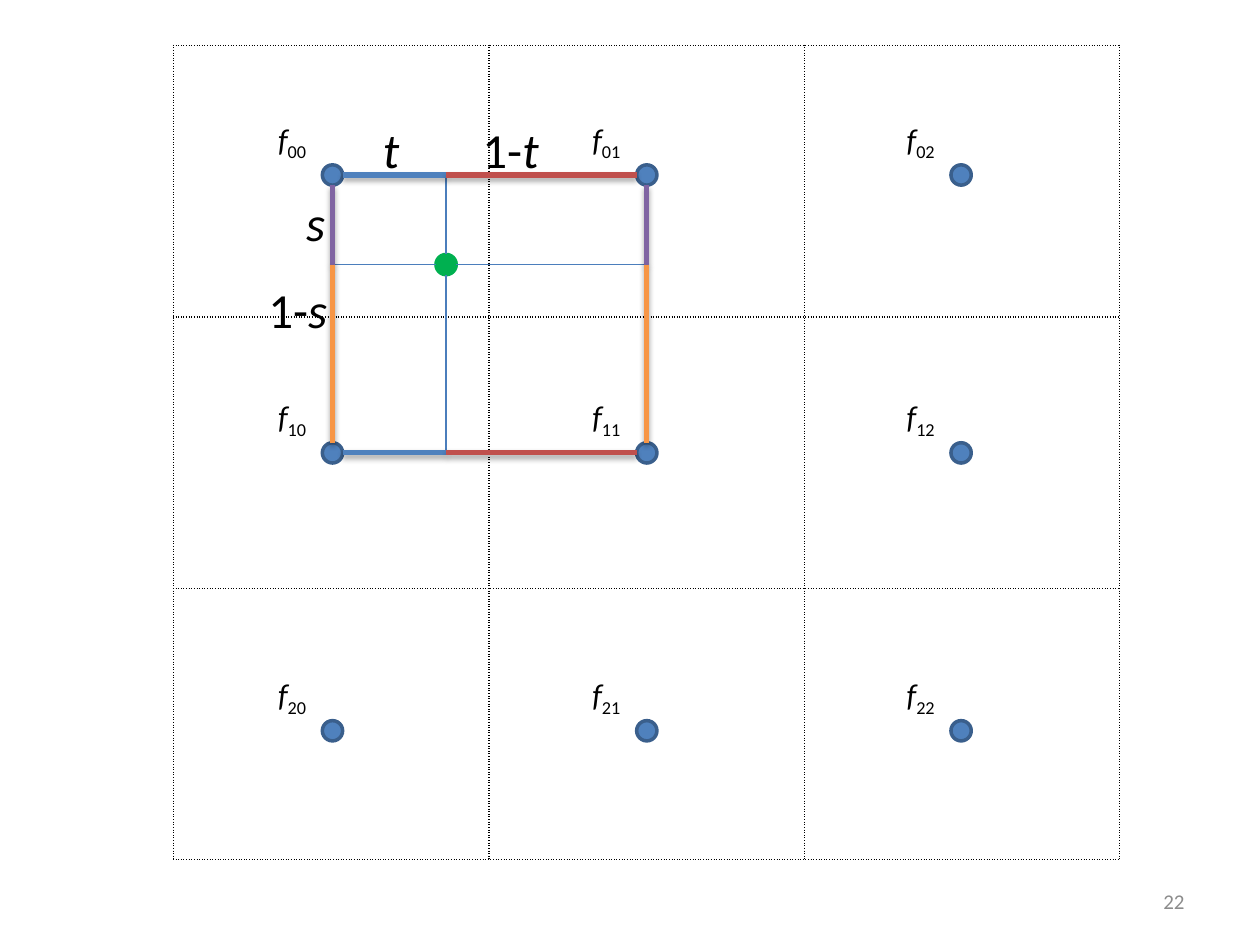
import itertools

import lxml.etree
import pptx
import pptx.dml.color
import pptx.enum.shapes
import pptx.enum.text
import pptx.oxml.ns
import pptx.util

Pt = pptx.util.Pt
qn = pptx.oxml.ns.qn

COLORS = {
    "white": "FFFFFF", "black": "000000", "gray": "8C8C8C",
    "dot": "4F81BD", "dot_edge": "3A5F8C", "sample": "00B050",
    "guide": "4B7EBC", "t": "4F81BD", "1-t": "C0504D",
    "s": "8064A2", "1-s": "F79646",
}


def rgb(name):
    return pptx.dml.color.RGBColor.from_string(COLORS[name])


def add_xml(parent, tag, **attributes):
    return lxml.etree.SubElement(parent, qn(tag), attributes)


class Board:
    """Holds the slide and its style; all lengths are in points."""
    font = "Calibri"
    radius = 5.8

    def __init__(self, slide):
        self.slide = slide

    def grid(self, left, top, cell_width, cell_height, count):
        frame = self.slide.shapes.add_table(
            count, count, Pt(left), Pt(top), Pt(cell_width * count), Pt(cell_height * count))
        table = frame.table
        table.first_row = table.horz_banding = False
        for column in table.columns:
            column.width = Pt(cell_width)
        for row in table.rows:
            row.height = Pt(cell_height)
        for cell in table.iter_cells():
            properties = cell._tc.get_or_add_tcPr()
            for side in "LRTB":
                border = add_xml(properties, f"a:ln{side}", w=str(Pt(1)))
                fill = add_xml(border, "a:solidFill")
                add_xml(fill, "a:srgbClr", val=COLORS["black"])
                add_xml(border, "a:prstDash", val="sysDot")
            cell.fill.solid()
            cell.fill.fore_color.rgb = rgb("white")

    def dot(self, x, y, fill, edge):
        size = Pt(2 * self.radius)
        dot = self.slide.shapes.add_shape(
            pptx.enum.shapes.MSO_SHAPE.OVAL, Pt(x - self.radius), Pt(y - self.radius), size, size)
        dot.shadow.inherit = False
        dot.fill.solid()
        dot.fill.fore_color.rgb = rgb(fill)
        dot.line.color.rgb = rgb(edge)
        dot.line.width = Pt(2)

    def line(self, start, end, color, width=0.75, shadow=False):
        line = self.slide.shapes.add_connector(
            pptx.enum.shapes.MSO_CONNECTOR.STRAIGHT, *map(Pt, (*start, *end)))
        line.line.color.rgb = rgb(color)
        line.line.width = Pt(width)
        effects = add_xml(line._element.spPr, "a:effectLst")
        if shadow:
            outer = add_xml(effects, "a:outerShdw", blurRad=str(Pt(3.1)), dist=str(Pt(1.8)),
                            dir="5400000", rotWithShape="0")
            tint = add_xml(outer, "a:srgbClr", val=COLORS["black"])
            add_xml(tint, "a:alpha", val="35000")

    def edge(self, start, end, color):
        self.line(start, end, color, width=3, shadow=True)

    def text(self, left, top, width, height, size, upright="", italic="", subscript="",
             color="black", wrap=False):
        """Write an upright part, an italic part and a subscript, each optional."""
        box = self.slide.shapes.add_textbox(*map(Pt, (left, top, width, height)))
        box.text_frame.word_wrap = wrap
        paragraph = box.text_frame.paragraphs[0]
        paragraph.font.name = self.font
        paragraph.font.size = Pt(size)
        paragraph.font.color.rgb = rgb(color)
        for part in filter(None, (upright, italic, subscript)):
            run = paragraph.add_run()
            run.text = part
            if part is italic:
                run.font.italic = True
            elif part is subscript:
                run.font._element.set("baseline", "-25000")
        return box

    def page_number(self, number):
        box = self.text(516, 500.5, 168, 28.8, 12, upright=number, color="gray", wrap=True)
        box.text_frame.vertical_anchor = pptx.enum.text.MSO_ANCHOR.MIDDLE
        box.text_frame.paragraphs[0].alignment = pptx.enum.text.PP_ALIGN.RIGHT


def main():
    presentation = pptx.Presentation()
    presentation.slide_width, presentation.slide_height = Pt(720), Pt(540)
    board = Board(presentation.slides.add_slide(presentation.slide_layouts[6]))

    board.grid(99.2, 26, 180.2, 155.1, 3)
    board.page_number("22")

    columns = [190 + 179.6 * i for i in range(3)]
    rows = [100 + 158.8 * i for i in range(3)]
    for (i, y), (j, x) in itertools.product(enumerate(rows), enumerate(columns)):
        board.dot(x, y, "dot", "dot_edge")
        board.text(x - 38.2, y - 35.2, 32.4, 28.8, 18, italic="f", subscript=f"{i}{j}")

    left, right = columns[:2]
    top, bottom = rows[:2]
    sample_x, sample_y = 254.9, 151.2
    gap = board.radius
    board.dot(sample_x, sample_y, "sample", "sample")
    board.line((left, sample_y), (sample_x - gap, sample_y), "guide")
    board.line((sample_x + gap, sample_y), (right, sample_y), "guide")
    board.line((sample_x, top), (sample_x, sample_y - gap), "guide")
    board.line((sample_x, sample_y + gap), (sample_x, bottom), "guide")

    for x in (left, right):
        board.edge((x, top + gap), (x, sample_y), "s")
        board.edge((x, sample_y), (x, bottom - gap), "1-s")
    for y in (top, bottom):
        board.edge((left + gap, y), (sample_x, y), "t")
        board.edge((sample_x, y), (right - gap, y), "1-t")

    board.text(167.8, 106.6, 25.9, 41, 28, italic="s")
    board.text(146.2, 156.2, 49, 41, 28, upright="1-", italic="s")
    board.text(211.7, 64.8, 24.5, 41, 28, italic="t")
    board.text(268.6, 64.8, 46.8, 41, 28, upright="1-", italic="t")

    presentation.save("out.pptx")


if __name__ == "__main__":
    main()
